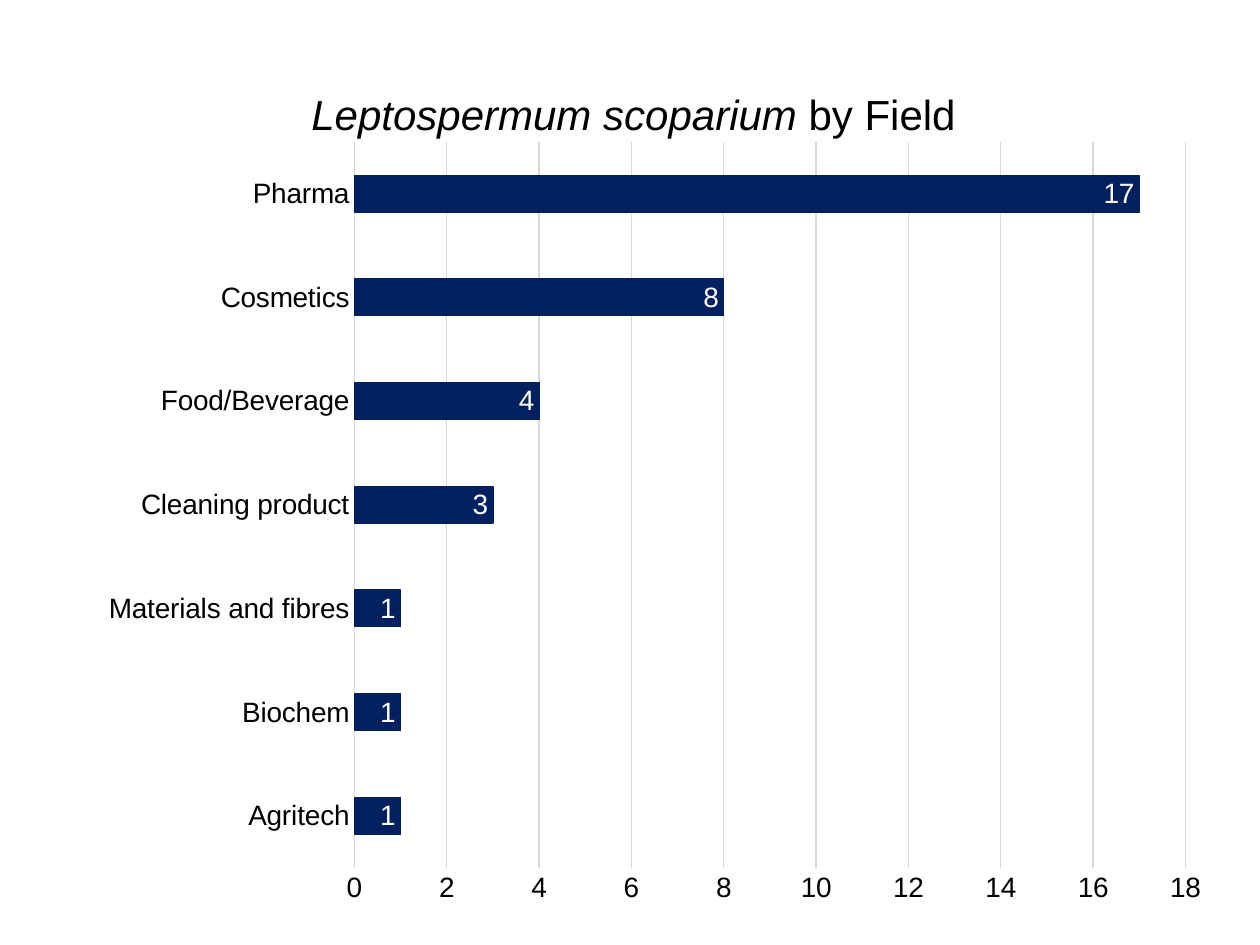
from dataclasses import astuple, dataclass

from lxml.etree import SubElement
from pptx import Presentation
from pptx.chart.chart import Chart
from pptx.chart.data import CategoryChartData
from pptx.dml.color import RGBColor
from pptx.enum.chart import XL_CHART_TYPE as ChartType
from pptx.enum.chart import XL_LABEL_POSITION as LabelPosition
from pptx.enum.chart import XL_TICK_MARK as TickMark
from pptx.oxml.ns import qn
from pptx.util import Cm, Pt

FONT = "Arial"
NAVY, GREY, BLACK, WHITE = "002060", "D9D9D9", "000000", "FFFFFF"


@dataclass
class Field:
    name: str
    count: int


@dataclass
class Area:
    """Position as fractions of the chart; a size of 0 is left automatic."""
    x: float
    y: float
    w: float = 0
    h: float = 0


# Bars run from the bottom up
FIELDS = [
    Field("Agritech", 1),
    Field("Biochem", 1),
    Field("Materials and fibres", 1),
    Field("Cleaning product", 3),
    Field("Food/Beverage", 4),
    Field("Cosmetics", 8),
    Field("Pharma", 17),
]
PLOT_AREA = Area(0.265, 0.1, 0.71, 0.841)
TITLE_AREA = Area(0.225, 0.035)


def paint(color_owner, color: str) -> None:
    """Give a fill a solid colour."""
    color_owner.solid()
    color_owner.fore_color.rgb = RGBColor.from_string(color)


def style_font(font, size: float, color: str, **formats) -> None:
    settings = {"name": FONT, "size": Pt(size), "bold": False, **formats}
    for attribute, value in settings.items():
        setattr(font, attribute, value)
    paint(font.fill, color)


def style_line(line, color: str) -> None:
    line.width = Pt(0.75)
    paint(line.fill, color)


def place(parent, area: Area, index: int, inner: bool = False) -> None:
    """Set the manual layout of a chart part, as its child at the index."""
    for old in parent.findall(qn("c:layout")):
        parent.remove(old)
    layout = SubElement(parent, qn("c:layout"))
    parent.insert(index, layout)
    manual = SubElement(layout, qn("c:manualLayout"))
    if inner:
        SubElement(manual, qn("c:layoutTarget")).set("val", "inner")
    for mode in ("xMode", "yMode"):
        SubElement(manual, qn(f"c:{mode}")).set("val", "edge")
    for side, value in zip("xywh", astuple(area)):
        if value:
            SubElement(manual, qn(f"c:{side}")).set("val", str(value))


def add_title(chart: Chart) -> None:
    heading = chart.chart_title.text_frame.paragraphs[0]
    for text, italic in (("Leptospermum scoparium", True), (" by Field", False)):
        run = heading.add_run()
        run.text = text
        style_font(run.font, 24, BLACK, italic=italic)
    chart.chart_title.include_in_layout = False
    place(chart.element.xpath("c:chart/c:title")[0], TITLE_AREA, 1)


def style_axes(chart: Chart) -> None:
    fields, counts = chart.category_axis, chart.value_axis
    for axis in (fields, counts):
        axis.major_tick_mark = axis.minor_tick_mark = TickMark.NONE
        style_font(axis.tick_labels.font, 16, BLACK)
    style_line(fields.format.line, GREY)
    counts.format.line.fill.background()
    scale = {"minimum_scale": 0, "maximum_scale": 18, "major_unit": 2}
    for attribute, value in scale.items():
        setattr(counts, attribute, value)
    counts.has_major_gridlines = True
    style_line(counts.major_gridlines.format.line, GREY)


def style_bars(chart: Chart) -> None:
    plot = chart.plots[0]
    plot.gap_width = 182
    plot.vary_by_categories = False
    bars = plot.series[0]
    paint(bars.format.fill, NAVY)
    style_line(bars.format.line, NAVY)
    labels = bars.data_labels
    labels.show_value = True
    labels.position = LabelPosition.INSIDE_END
    style_font(labels.font, 16, WHITE)


def main() -> None:
    deck = Presentation()
    deck.slide_width, deck.slide_height = Cm(25.4), Cm(19.05)
    slide = deck.slides.add_slide(deck.slide_layouts[6])
    paint(slide.background.fill, WHITE)

    # Bar chart of the counts by field
    counts = CategoryChartData()
    counts.categories = [field.name for field in FIELDS]
    counts.add_series("Series 1", [field.count for field in FIELDS])
    chart = slide.shapes.add_chart(
        ChartType.BAR_CLUSTERED, Cm(0.89), Cm(1.12), Cm(23.6), Cm(17.4), counts
    ).chart
    chart.has_legend = False
    style_font(chart.font, 16, BLACK)

    # Chart parts
    add_title(chart)
    style_axes(chart)
    style_bars(chart)
    place(chart.element.xpath("c:chart/c:plotArea")[0], PLOT_AREA, 0, inner=True)

    deck.save("out.pptx")


if __name__ == "__main__":
    main()
